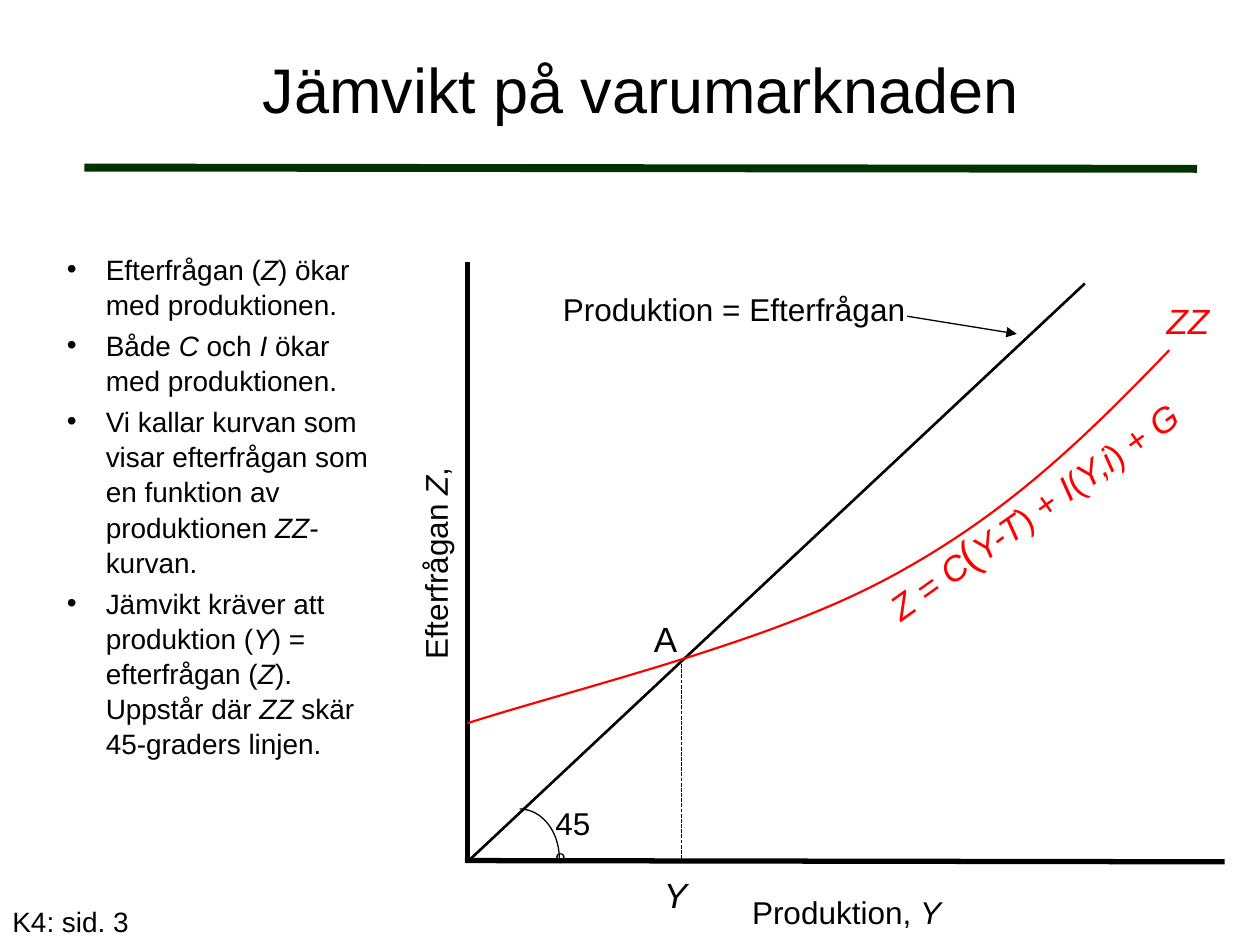
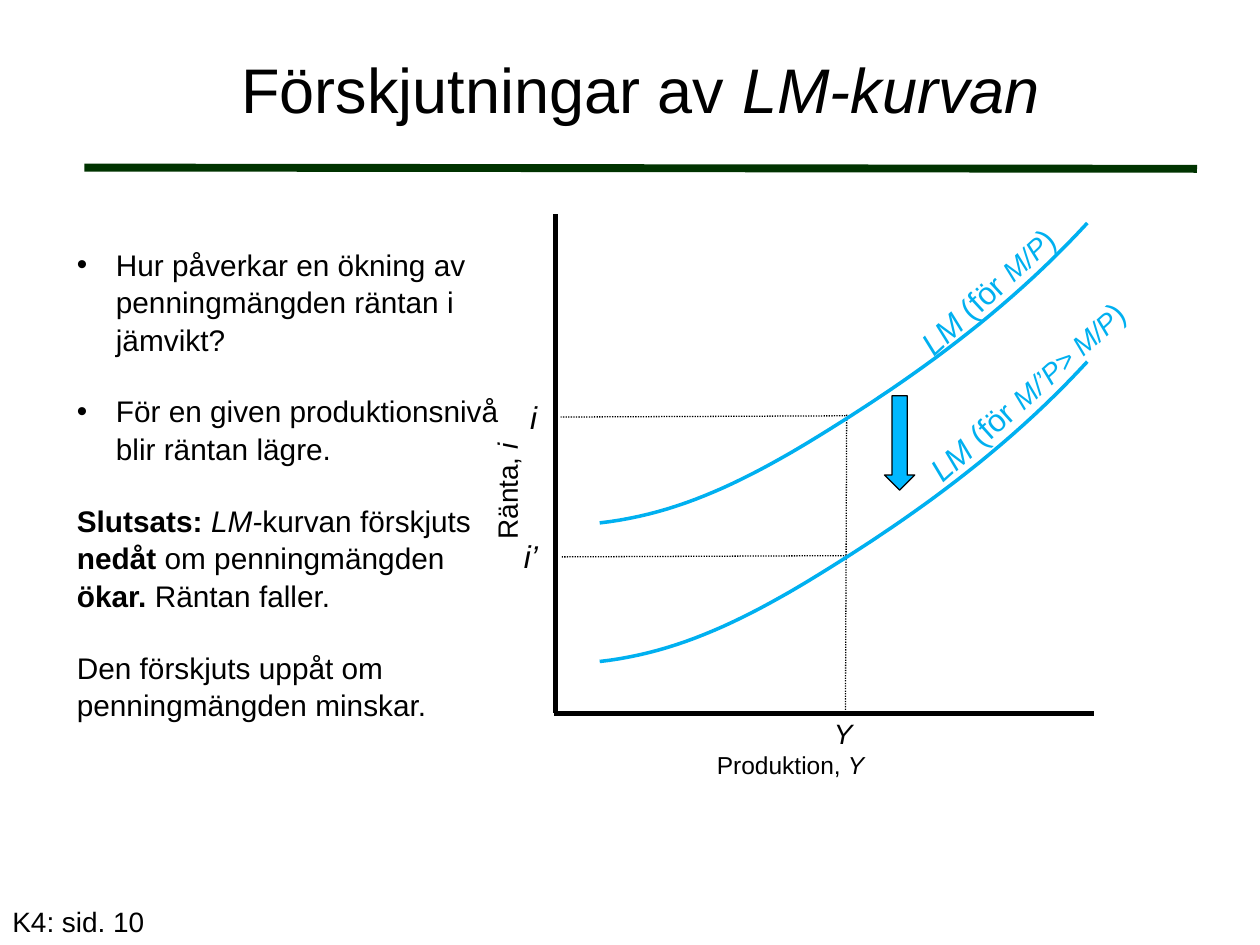
from pptx import Presentation
from pptx.dml.color import RGBColor
from pptx.enum.dml import MSO_LINE
from pptx.enum.shapes import MSO_CONNECTOR, MSO_SHAPE
from pptx.enum.text import MSO_ANCHOR, MSO_AUTO_SIZE, PP_ALIGN
from pptx.oxml.ns import qn
from pptx.util import Inches, Pt
from lxml.etree import SubElement

BLACK, GREEN, RED, SKY, AZURE = "000000", "003300", "FF0000", "00B0F0", "00B8FF"
DASHED, DOTTED = MSO_LINE.SQUARE_DOT, MSO_LINE.ROUND_DOT

deck = Presentation()
deck.slide_width, deck.slide_height = Inches(10), Inches(7.5)
column, row = deck.slide_width / 100, deck.slide_height / 75


def paint(target, hex_color):
    target.rgb = RGBColor.from_string(hex_color)


def write(paragraph, markup, size, hex_color=BLACK):
    for i, stretch in enumerate(markup.split("_")):
        for j, words in enumerate(stretch.split("*")):
            if words:
                run = paragraph.add_run()
                run.text = words
                style = {"name": "Arial", "size": Pt(size), "italic": i % 2 == 1, "bold": j % 2 == 1}
                for attribute, value in style.items():
                    setattr(run.font, attribute, value)
                paint(run.font.color, hex_color)


topics = [
    {
        "title": "Jämvikt på varumarknaden",
        "page": "K4: sid. 3",
        "body": {
            "area": (4.3, 19.4, 26.8, 29.9), "size": 16, "after": 1.6,
            "bullets": [
                "Efterfrågan (_Z_) ökar med produktionen.",
                "Både _C_ och _I _ökar med produktionen.",
                "Vi kallar kurvan som visar efterfrågan som en funktion av produktionen _ZZ-_kurvan.",
                "Jämvikt kräver att produktion (_Y_) = efterfrågan (_Z_). Uppstår där _ZZ _skär 45-graders linjen.",
            ],
            "conclusions": [],
        },
        "lines": [
            (36.9, 68.3, 97.2, 68.4, 3, None),
            (37.1, 68.4, 37.1, 20.8, 3, None),
            (37.1, 68.4, 86.1, 22.5, 1.5, None),
            (72, 25.1, 80.7, 26.5, 0.75, "triangle"),
            (54.1, 52.3, 54.1, 68.5, 0.75, DASHED),
        ],
        "curves": [
            (RED, 1.25, [(37.1, 57.4), (47, 54.3), (60.8, 51), (70.1, 46.1)],
             [(70.1, 46.1), (79.4, 41.2), (85.6, 35.3), (92.8, 27.8)]),
        ],
        "symbols": [(MSO_SHAPE.ARC, (38.1, 64.2, 6.3, 7.9), None)],
        "labels": [
            ("Produktion, _Y_", (58.7, 70.4, 17.1, 4.1), 18, BLACK, {}),
            ("Efterfrågan _Z_,", (25.9, 42.6, 17.4, 4.1), 18, BLACK, {"rotation": 270}),
            ("Produktion = Efterfrågan", (43.7, 22.5, 29.4, 4.1), 18, BLACK, {}),
            ("45o", (43.1, 63.3, 4.9, 4), 18, BLACK, {"wrap": True, "raised": "o"}),
            ("_Z = C_(_Y-T_) + _I_(_Y,i_) + _G_", (62.9, 37.9, 38, 5), 20, RED,
             {"rotation": 324.7, "wrap": True, "align": PP_ALIGN.CENTER, "sizes": {1: 24}}),
            ("_ZZ_", (91.6, 23.3, 5.5, 4.4), 20, RED, {}),
            ("_Y_", (51.7, 68.8, 3.3, 4.4), 20, BLACK, {}),
            ("A", (50.9, 48.5, 3.9, 4.4), 20, BLACK, {}),
        ],
    },
    {
        "title": "Förskjutningar av _LM-kurvan_",
        "page": "K4: sid. 10",
        "body": {
            "area": (5.1, 18.9, 36, 40.1), "size": 17, "after": 18,
            "bullets": [
                "Hur påverkar en ökning av penningmängden räntan i jämvikt?",
                "För en given produktionsnivå blir räntan lägre.",
            ],
            "conclusions": [
                "*Slutsats: *_LM-_kurvan förskjuts *nedåt* om penningmängden *ökar. *Räntan faller.",
                "Den förskjuts uppåt om penningmängden minskar.",
            ],
        },
        "lines": [
            (44, 56.6, 86.8, 56.6, 3, None),
            (44.1, 56.6, 44.1, 17, 3, None),
            (67.2, 32.9, 67.1, 56.6, 0.75, DOTTED),
            (67.1, 33, 44.5, 33.1, 0.75, DOTTED),
            (67.2, 44.1, 44.6, 44.2, 0.75, DOTTED),
        ],
        "curves": [
            (SKY, 2, [(47.6, 41.5 + drop), (53.9, 40.8 + drop), (59.4, 38.1 + drop), (65.8, 34.1 + drop)],
             [(65.8, 34.1 + drop), (72.2, 30.1 + drop), (79.7, 24.9 + drop), (86.3, 17.7 + drop)])
            for drop in (0, 11)
        ],
        "symbols": [(MSO_SHAPE.DOWN_ARROW, (70.2, 31.4, 2.4, 7.5), AZURE)],
        "labels": [
            ("Produktion, _Y_", (55.9, 59, 13.8, 3.4), 14, BLACK, {}),
            ("Ränta, _i_", (35.4, 37.1, 9.7, 3.7), 16, BLACK, {"rotation": 270}),
            ("_Y_", (65.2, 56.4, 5, 5.5), 16, BLACK, {}),
            ("_LM _(för _M/P_)", (70.6, 20.9, 16, 4), 18, SKY, {"rotation": 317.2, "sizes": {2: 16}}),
            ("_LM _(för _M/’P> M/P_)", (70.4, 28.4, 23.7, 4), 18, SKY,
             {"rotation": 318.1, "wrap": True, "sizes": {2: 16}}),
            ("_i_", (41.1, 31.1, 2.6, 4), 18, BLACK, {}),
            ("_i’_", (40.6, 42.1, 3.1, 4), 18, BLACK, {}),
        ],
    },
]

for topic in topics:
    slide = deck.slides.add_slide(deck.slide_layouts[1])
    heading, explanation = slide.placeholders
    body = topic["body"]
    for holder, area in ((heading, (6.7, 0.8, 88.3, 12.4)), (explanation, body["area"])):
        frame = zip(("left", "top", "width", "height"), area, (column, row) * 2)
        for attribute, share, unit in frame:
            setattr(holder, attribute, int(share * unit))
        holder.text_frame.auto_size = MSO_AUTO_SIZE.NONE
    heading.text_frame.vertical_anchor = MSO_ANCHOR.MIDDLE
    heading.text_frame.paragraphs[0].alignment = PP_ALIGN.CENTER
    write(heading.text_frame.paragraphs[0], topic["title"], 36)

    for index, markup in enumerate(body["bullets"] + body["conclusions"]):
        notes = explanation.text_frame
        paragraph = notes.add_paragraph() if index else notes.paragraphs[0]
        spacing = {"space_before": Pt(body["size"] / 10), "space_after": Pt(body["after"]), "line_spacing": 1.05}
        for attribute, value in spacing.items():
            setattr(paragraph, attribute, value)
        bulleted = index < len(body["bullets"])
        indent = Inches(0.31) if bulleted else 0
        properties = paragraph._p.get_or_add_pPr()
        properties.set("marL", str(indent))
        properties.set("indent", str(-indent))
        if bulleted:
            SubElement(properties, qn("a:buChar")).set("char", "•")
        else:
            SubElement(properties, qn("a:buNone"))
        write(paragraph, markup, body["size"])

    rule = (6.7, 13.3, 95, 13.4, 4.5, None)
    for x1, y1, x2, y2, weight, ending in [rule] + topic["lines"]:
        stroke = slide.shapes.add_connector(
            MSO_CONNECTOR.STRAIGHT, int(x1 * column), int(y1 * row), int(x2 * column), int(y2 * row))
        paint(stroke.line.color, GREEN if weight == 4.5 else BLACK)
        stroke.line.width = Pt(weight)
        if ending == "triangle":
            SubElement(stroke.line._get_or_add_ln(), qn("a:tailEnd")).set("type", ending)
        elif ending:
            stroke.line.dash_style = ending
        SubElement(stroke._element.spPr, qn("a:effectLst"))

    for hex_color, weight, *arcs in topic["curves"]:
        points = []
        for arc in arcs:
            for step in range(25):
                t = step / 24
                weights = ((1 - t) ** 3, 3 * t * (1 - t) ** 2, 3 * t ** 2 * (1 - t), t ** 3)
                x, y = (sum(w * p[axis] for w, p in zip(weights, arc)) for axis in (0, 1))
                points.append((int(x * column), int(y * row)))
        builder = slide.shapes.build_freeform(*points[0])
        builder.add_line_segments(points[1:], close=False)
        curve = builder.convert_to_shape()
        curve.shadow.inherit = False
        curve.fill.background()
        paint(curve.line.color, hex_color)
        curve.line.width = Pt(weight)

    for preset, (x, y, w, h), hex_color in topic["symbols"]:
        symbol = slide.shapes.add_shape(preset, int(x * column), int(y * row), int(w * column), int(h * row))
        symbol.shadow.inherit = False
        if hex_color:
            symbol.fill.solid()
            paint(symbol.fill.fore_color, hex_color)
        else:
            symbol.fill.background()
        paint(symbol.line.color, BLACK)
        symbol.line.width = Pt(0.75)

    page = (topic["page"], (0, 71.3, 20.8, 3.7), 16, BLACK, {"wrap": True})
    for markup, (x, y, w, h), size, hex_color, extras in topic["labels"] + [page]:
        label = slide.shapes.add_textbox(int(x * column), int(y * row), int(w * column), int(h * row))
        label.rotation = extras.get("rotation", 0)
        label.text_frame.word_wrap = extras.get("wrap", False)
        label.text_frame.auto_size = MSO_AUTO_SIZE.SHAPE_TO_FIT_TEXT
        paragraph = label.text_frame.paragraphs[0]
        paragraph.alignment = extras.get("align", PP_ALIGN.LEFT)
        raised = extras.get("raised", "")
        write(paragraph, markup.removesuffix(raised), size, hex_color)
        if raised:
            write(paragraph, raised, size, hex_color)
            paragraph.runs[-1].font._element.set("baseline", "30000")
        for position, run_size in extras.get("sizes", {}).items():
            paragraph.runs[position].font.size = Pt(run_size)

deck.save("out.pptx")
